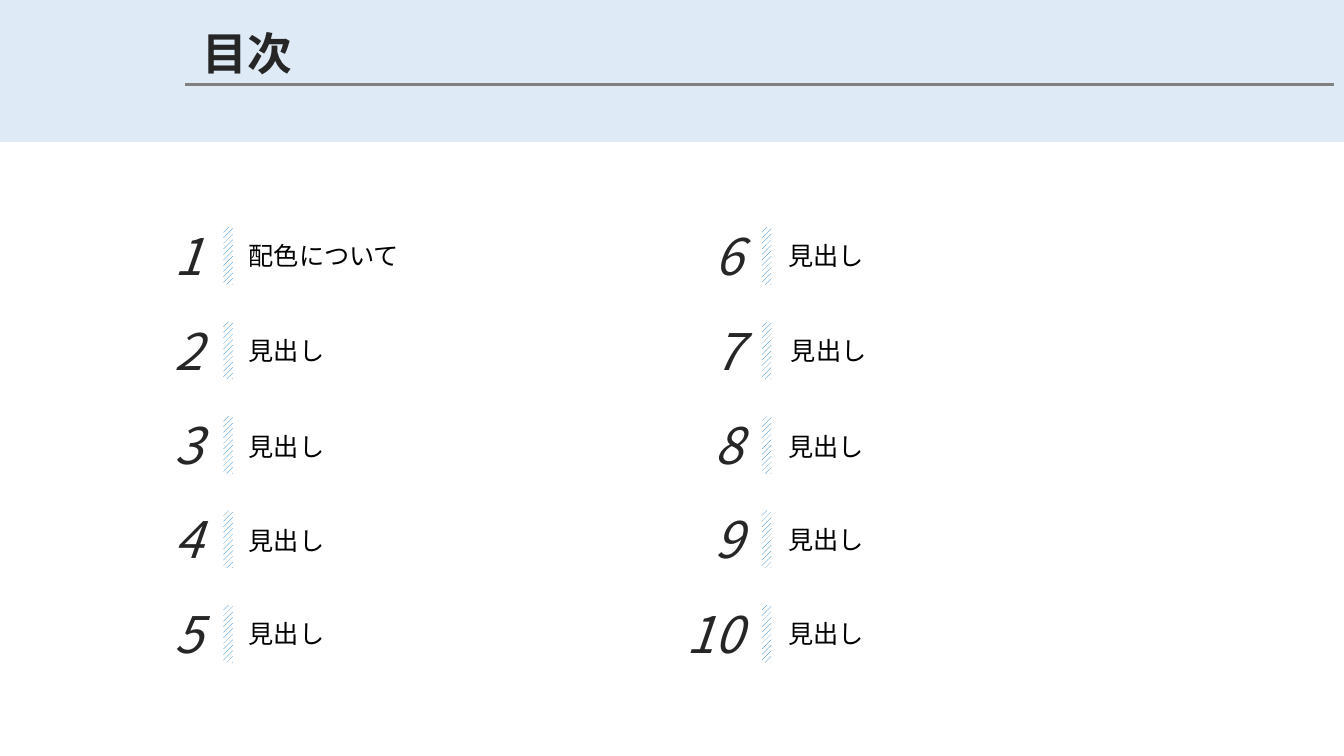
from dataclasses import dataclass

from lxml import etree
from pptx import Presentation
from pptx.dml.color import RGBColor
from pptx.enum import dml, shapes, text
from pptx.oxml.ns import qn
from pptx.shapes.autoshape import Shape
from pptx.slide import Slide
from pptx.util import Cm, Pt


@dataclass(frozen=True)
class Theme:
    font: str = "Noto Sans CJK JP"
    latin_font: str = "Arial"
    band: RGBColor = RGBColor(0xDE, 0xEB, 0xF7)
    rule: RGBColor = RGBColor(0x80, 0x80, 0x80)
    dark: RGBColor = RGBColor(0x26, 0x26, 0x26)
    black: RGBColor = RGBColor(0, 0, 0)
    stripe: RGBColor = RGBColor(0, 0x70, 0xC0)
    white: RGBColor = RGBColor(0xFF, 0xFF, 0xFF)
    title_size: int = 32
    number_size: int = 36
    heading_size: int = 18


THEME = Theme()


@dataclass(frozen=True)
class Style:
    size: int
    color: RGBColor
    font: str = THEME.font
    bold: bool = False
    italic: bool = False
    line_points: int | None = None
    space_after: float = 0


@dataclass(frozen=True)
class Entry:
    number: str
    width: float
    heading: str = "見出し"
    height: float = 1.02
    line_points: int | None = None
    font: str = THEME.font
    indent: float = 0
    number_width: float = 1.22


@dataclass(frozen=True)
class Column:
    number_right: float
    bar_left: float
    heading_left: float
    entries: tuple[Entry, ...]


FIRST_CENTRE = 6.45
ROW_PITCH = 2.38
NUMBER_HEIGHT = 1.8
BAR_WIDTH = 0.24
BAR_HEIGHT = 1.45

COLUMNS = (
    Column(5.36, 5.63, 6.02, (
        Entry("1", 7.49, "配色について"),
        Entry("2", 7.32),
        Entry("3", 8.1, height=1.12, line_points=24, font=THEME.latin_font),
        Entry("4", 8.23, height=1.07, line_points=23),
        Entry("5", 6.86),
    )),
    Column(18.98, 19.2, 19.61, (
        Entry("6", 5.82),
        Entry("7", 5.82, indent=0.07),
        Entry("8", 9.78, height=1.12, line_points=24),
        Entry("9", 5.49),
        Entry("10", 5.49, number_width=1.93),
    )),
)


def write(box: Shape, content: str, style: Style, wrap: bool = True) -> None:
    frame = box.text_frame
    frame.word_wrap = wrap
    frame.auto_size = text.MSO_AUTO_SIZE.SHAPE_TO_FIT_TEXT
    frame.vertical_anchor = text.MSO_ANCHOR.TOP
    frame.text = content
    para = frame.paragraphs[0]
    para.alignment = text.PP_ALIGN.LEFT
    para.space_before = Pt(0)
    para.space_after = Pt(style.space_after)
    para.line_spacing = Pt(style.line_points) if style.line_points else 1.0
    para.font.name = style.font
    para.font.size = Pt(style.size)
    para.font.bold = style.bold
    para.font.italic = style.italic
    para.font.color.rgb = style.color
    for properties in box.element.iter(qn("a:defRPr")):
        etree.SubElement(properties, qn("a:ea"), typeface=THEME.font)


def add_text(page: Slide, left: float, centre: float, width: float, height: float,
             content: str, style: Style, wrap: bool = True) -> None:
    box = page.shapes.add_textbox(Cm(left), Cm(centre - height / 2), Cm(width), Cm(height))
    write(box, content, style, wrap)


def add_rectangle(page: Slide, left: float, top: float, width: float, height: float) -> Shape:
    rectangle = page.shapes.add_shape(
        shapes.MSO_SHAPE.RECTANGLE, Cm(left), Cm(top), Cm(width), Cm(height))
    rectangle.shadow.inherit = False
    rectangle.line.fill.background()
    return rectangle


def add_header(page: Slide) -> None:
    band = add_rectangle(page, -0.02, 0, 33.89, 3.58)
    band.fill.solid()
    band.fill.fore_color.rgb = THEME.band
    rule = page.shapes.add_connector(
        shapes.MSO_CONNECTOR.STRAIGHT, Cm(4.67), Cm(2.13), Cm(33.63), Cm(2.13))
    rule.line.color.rgb = THEME.rule
    rule.line.width = Pt(1.5)
    etree.SubElement(rule.element.spPr, qn("a:effectLst"))

    title = page.shapes.title
    title.element.getparent().append(title.element)
    title.left, title.top, title.width, title.height = Cm(4.85), Cm(0.81), Cm(12.8), Cm(1.4)
    write(title, "目次", Style(THEME.title_size, THEME.dark, bold=True,
                             line_points=30, space_after=13.5))


def add_entry(page: Slide, column: Column, entry: Entry, centre: float) -> None:
    add_text(page, column.number_right - entry.number_width, centre,
             entry.number_width, NUMBER_HEIGHT, entry.number,
             Style(THEME.number_size, THEME.dark, italic=True), wrap=False)
    bar = add_rectangle(page, column.bar_left, centre - BAR_HEIGHT / 2, BAR_WIDTH, BAR_HEIGHT)
    bar.fill.patterned()
    bar.fill.pattern = dml.MSO_PATTERN.WIDE_UPWARD_DIAGONAL
    bar.fill.fore_color.rgb = THEME.stripe
    bar.fill.back_color.rgb = THEME.white
    add_text(page, column.heading_left + entry.indent, centre, entry.width, entry.height,
             entry.heading, Style(THEME.heading_size, THEME.black, entry.font,
                                  line_points=entry.line_points, space_after=6))


def main() -> None:
    deck = Presentation()
    deck.slide_width, deck.slide_height = Cm(33.87), Cm(19.05)
    page = deck.slides.add_slide(deck.slide_layouts.get_by_name("Title Only"))
    add_header(page)
    for column in COLUMNS:
        for row, entry in enumerate(column.entries):
            add_entry(page, column, entry, FIRST_CENTRE + row * ROW_PITCH)
    deck.save("out.pptx")


if __name__ == "__main__":
    main()
